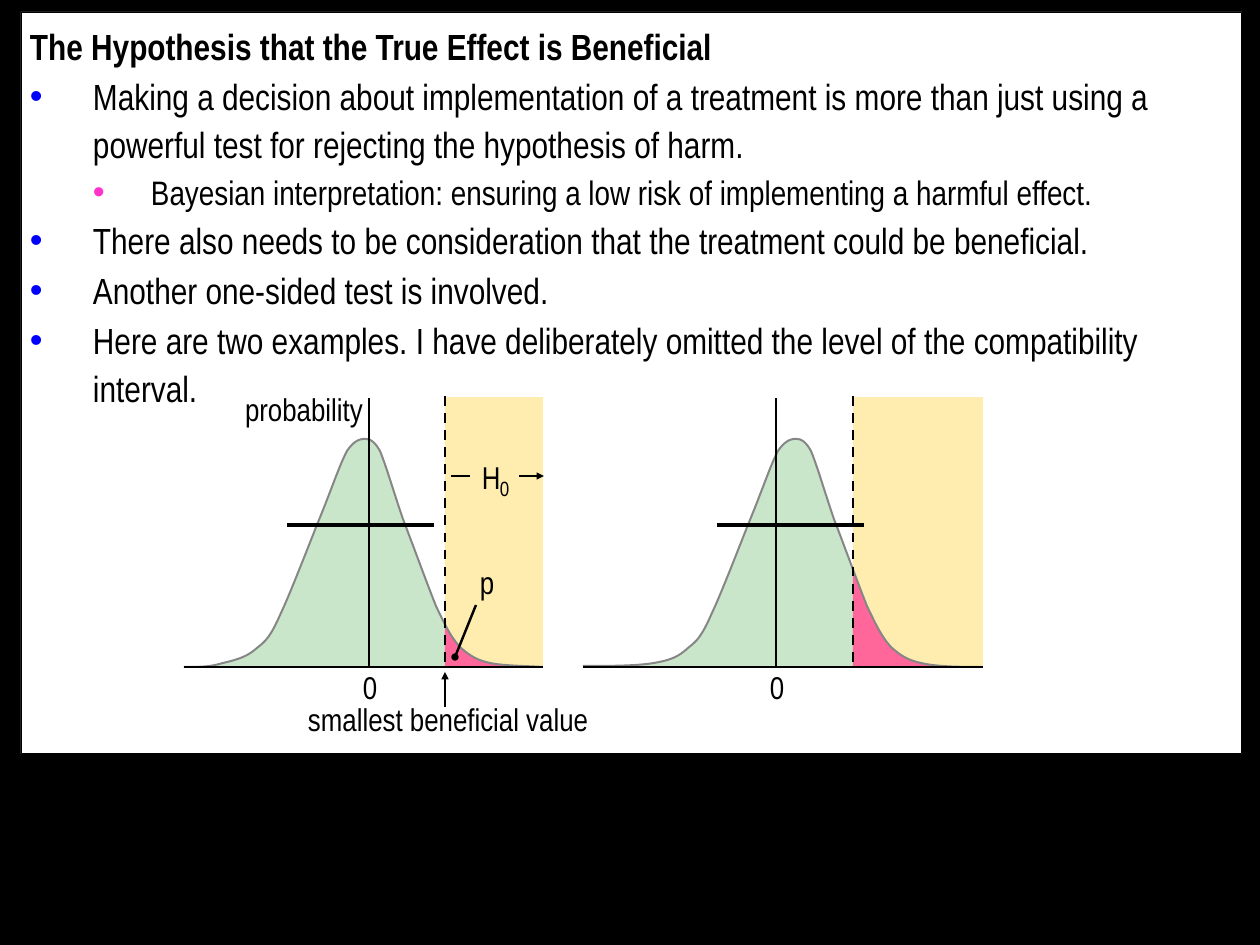
import pptx
import pptx.dml.color
import pptx.enum.dml
import pptx.enum.shapes
import pptx.enum.text
import pptx.oxml.ns
import pptx.util
from lxml import etree

PX = 10479
FONT = "Arial Narrow"
BLACK, WHITE, BLUE, MAGENTA = "000000", "FFFFFF", "0000FF", "FF33CC"
YELLOW, GREEN, PINK, GREY = "FFECAF", "C9E5CA", "FF6699", "868686"
BASE, TOP, INTERVAL_Y = 667, 396, 525
TITLE = "The Hypothesis that the True Effect is Beneficial"
BULLETS = [
    (0, "Making a decision about implementation of a treatment is more than just using a "
        "powerful test for rejecting the hypothesis of harm."),
    (1, "Bayesian interpretation: ensuring a low risk of implementing a harmful effect."),
    (0, "There also needs to be consideration that the treatment could be beneficial."),
    (0, "Another one-sided test is involved."),
    (0, "Here are two examples. I have deliberately omitted the level of the compatibility "
        "interval."),
]
BULLET_LEVELS = [(63, -63, 30, BLUE), (121, -58, 28, MAGENTA)]
BELL_CORE = [
    [(476, 660), (469, 655), (460, 647)], [(451, 637), (446, 627), (436, 606)],
    [(428, 586), (413, 545), (403, 519)], [(394, 493), (386, 465), (380, 451)],
    [(373, 438), (367, 439), (364, 439)], [(362, 439), (355, 439), (347, 451)],
    [(340, 464), (332, 488), (321, 515)], [(310, 542), (291, 592), (281, 613)],
    [(271, 636), (266, 641), (257, 648)],
]


def emu(pixels):
    """Turn a length in px into EMU."""
    return pptx.util.Emu(round(pixels * PX))


def color(value):
    """Turn a hex string into a colour."""
    return pptx.dml.color.RGBColor.from_string(value)


def add_element(parent, tag, **attributes):
    """Append a DrawingML element with its attributes."""
    return etree.SubElement(parent, pptx.oxml.ns.qn(tag), attributes)


def paint(shape, fill=None, line=None, width=0.75):
    """Give a shape its fill and outline, and no shadow."""
    shape.shadow.inherit = False
    if fill:
        shape.fill.solid()
        shape.fill.fore_color.rgb = color(fill)
    else:
        shape.fill.background()
    if line:
        shape.line.color.rgb = color(line)
        shape.line.width = pptx.util.Pt(width)
    else:
        shape.line.fill.background()


def add_box(slide, left, top, right, bottom, fill, line=None):
    """Add a filled rectangle between two corners."""
    shape = slide.shapes.add_shape(pptx.enum.shapes.MSO_SHAPE.RECTANGLE, emu(left), emu(top),
                                   emu(right - left), emu(bottom - top))
    paint(shape, fill, line)
    return shape


def add_line(slide, start, end, width=1.63, dash=None, head=None):
    """Add a black straight line, optionally dashed or with an end mark."""
    line = slide.shapes.add_connector(pptx.enum.shapes.MSO_CONNECTOR.STRAIGHT,
                                      *(emu(value) for value in (*start, *end)))
    line.line.color.rgb = color(BLACK)
    line.line.width = pptx.util.Pt(width)
    if dash:
        line.line.dash_style = dash
    if head:
        add_element(line.line._get_or_add_ln(), "a:tailEnd", type=head)
    add_element(line._element.spPr, "a:effectLst")


def add_outline(slide, points, closed=True, **format):
    """Add a freeform through the given points."""
    points = [(emu(x), emu(y)) for x, y in points]
    builder = slide.shapes.build_freeform(*points[0], scale=1.0)
    builder.add_line_segments(points[1:], close=closed)
    paint(builder.convert_to_shape(), **format)


def write(paragraph, text, size=26, bold=False):
    """Write left-aligned black text into a paragraph."""
    paragraph.alignment = pptx.enum.text.PP_ALIGN.LEFT
    run = paragraph.add_run()
    run.text = text
    run.font.name = FONT
    run.font.size = pptx.util.Pt(size)
    run.font.bold = bold
    run.font.color.rgb = color(BLACK)


def set_margins(frame, left, top, right, bottom):
    """Set the four insets of a text frame."""
    frame.margin_left, frame.margin_top = emu(left), emu(top)
    frame.margin_right, frame.margin_bottom = emu(right), emu(bottom)


def add_label(slide, text, left, top, width=30, **format):
    """Add a one-line label without insets."""
    frame = slide.shapes.add_textbox(emu(left), emu(top), emu(width), emu(43)).text_frame
    frame.word_wrap = False
    set_margins(frame, 0, 0, 0, 0)
    write(frame.paragraphs[0], text, **format)


def add_bullet(frame, level, text):
    """Add a bulleted paragraph at the given level."""
    margin, indent, size, bullet_color = BULLET_LEVELS[level]
    paragraph = frame.add_paragraph()
    paragraph.level = level
    paragraph.line_spacing = 1.1
    paragraph.space_before = pptx.util.Pt(1.5)
    write(paragraph, text, size=size)
    properties = paragraph._p.get_or_add_pPr()
    properties.set("marL", str(emu(margin)))
    properties.set("indent", str(emu(indent)))
    add_element(add_element(properties, "a:buClr"), "a:srgbClr", val=bullet_color)
    add_element(properties, "a:buFont", typeface="Arial")
    add_element(properties, "a:buChar", char="•")


def add_body(slide):
    """Add the white panel with the heading and the bullets."""
    panel = add_box(slide, 21, 12, 1242, 754, WHITE, line=BLACK)
    frame = panel.text_frame
    frame.word_wrap = True
    frame.vertical_anchor = pptx.enum.text.MSO_ANCHOR.TOP
    set_margins(frame, 9, 8, 9, 4)
    heading = frame.paragraphs[0]
    heading.line_spacing = 1.1
    heading.space_before = pptx.util.Pt(6)
    write(heading, TITLE, size=30, bold=True)
    for level, text in BULLETS:
        add_bullet(frame, level, text)


def bell_points(right_tail, left_tail, shift, steps=12):
    """Sample the bell curve from its right end to its left end."""
    start, *first = right_tail
    points = [start]
    for control_1, control_2, end in [first, *BELL_CORE, *left_tail]:
        origin = points[-1]
        for step in range(1, steps + 1):
            t = step / steps
            weights = ((1 - t) ** 3, 3 * t * (1 - t) ** 2, 3 * t * t * (1 - t), t ** 3)
            corners = (origin, control_1, control_2, end)
            points.append(tuple(sum(weight * corner[axis] for weight, corner
                                    in zip(weights, corners)) for axis in (0, 1)))
    return [(x + shift, y) for x, y in points]


def add_distribution(slide, bell, zero, threshold, interval_left):
    """Add one probability plot with its beneficial region."""
    right, left = bell[0][0], bell[-1][0]
    add_box(slide, threshold, TOP + 1, right, BASE, YELLOW)
    add_outline(slide, bell, fill=GREEN)
    tail = [point for point in bell if point[0] >= threshold]
    add_outline(slide, [*tail, (threshold, tail[-1][1]), (threshold, BASE)], fill=PINK)
    add_outline(slide, bell, closed=False, line=GREY, width=1.63)
    add_line(slide, (left, BASE), (right, BASE))
    add_line(slide, (threshold, TOP), (threshold, BASE), width=2,
             dash=pptx.enum.dml.MSO_LINE.DASH)
    add_line(slide, (interval_left, INTERVAL_Y), (interval_left + 147, INTERVAL_Y), width=4)
    add_line(slide, (zero, TOP + 2), (zero, BASE))
    add_label(slide, "0", zero - 6, 668)


def add_annotations(slide):
    """Add the labels and pointers of the left plot."""
    add_label(slide, "probability", 245, 390, width=129)
    add_label(slide, "smallest beneficial value", 308, 700, width=291)
    add_line(slide, (445, 707), (445, 672), width=2, head="triangle")
    add_line(slide, (451, 476), (470, 476), width=1.5)
    add_line(slide, (519, 476), (544, 476), width=1.5, head="triangle")
    add_label(slide, "H", 482, 458)
    add_label(slide, "0", 500, 476, width=17, size=17)
    add_label(slide, "p", 480, 563)
    add_line(slide, (476, 605), (455, 657), width=2, head="oval")


def main():
    """Build and save the slide."""
    presentation = pptx.Presentation()
    presentation.slide_width, presentation.slide_height = emu(1260), emu(945)
    slide = presentation.slides.add_slide(presentation.slide_layouts[6])
    slide.background.fill.solid()
    slide.background.fill.fore_color.rgb = color(BLACK)
    add_body(slide)
    left_bell = bell_points([(543, 667), (531, 666), (504, 666), (490, 663)],
                            [[(247, 657), (236, 660), (223, 663)],
                             [(212, 666), (208, 667), (184, 667)]], 0)
    right_bell = bell_points([(552, 667), (534, 667), (506, 667), (490, 663)],
                             [[(247, 657), (240, 660), (223, 663)],
                              [(205, 666), (177, 666), (152, 666)]], 431)
    add_distribution(slide, left_bell, zero=369, threshold=445, interval_left=287)
    add_distribution(slide, right_bell, zero=776, threshold=853, interval_left=717)
    add_annotations(slide)
    presentation.save("out.pptx")


if __name__ == "__main__":
    main()
